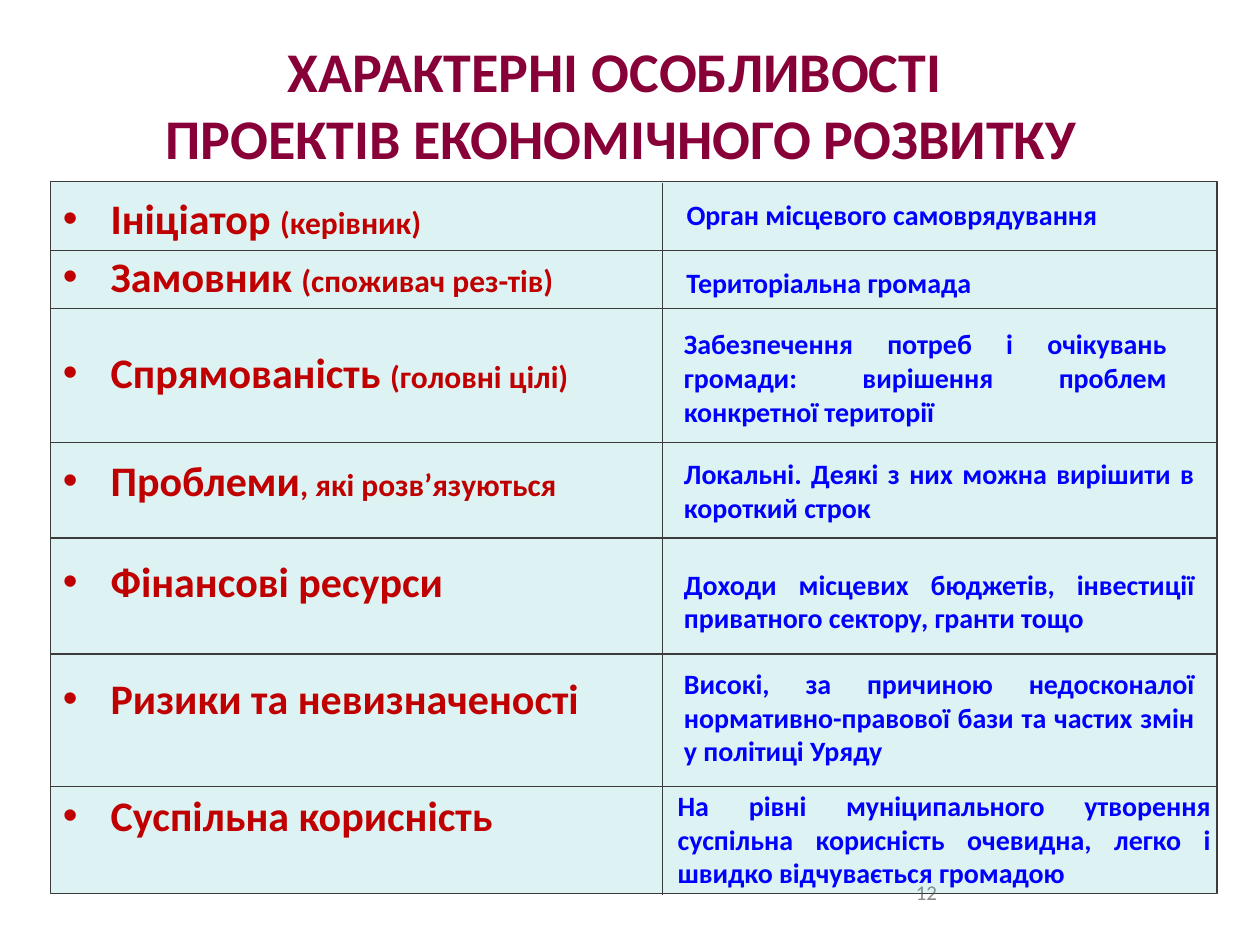
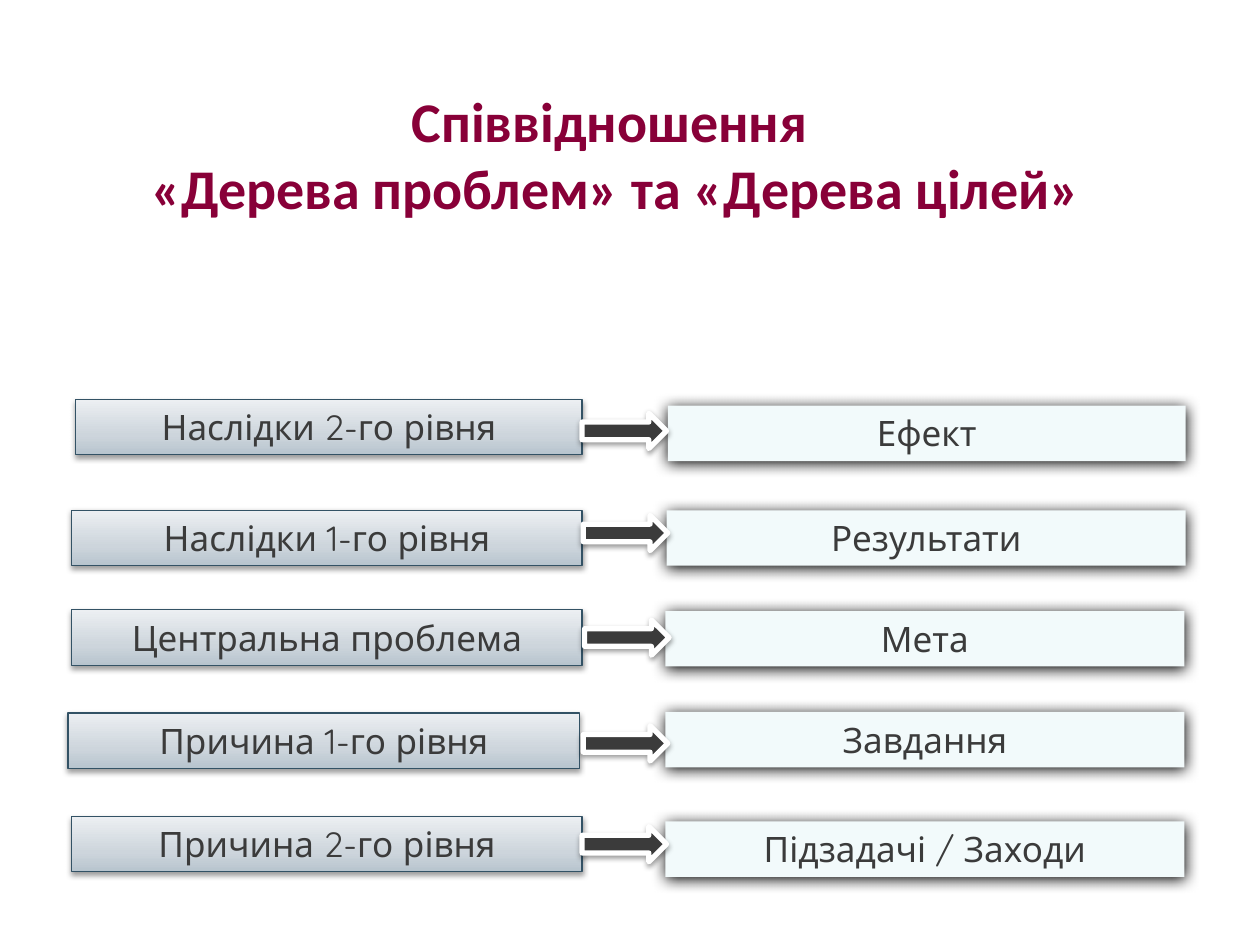
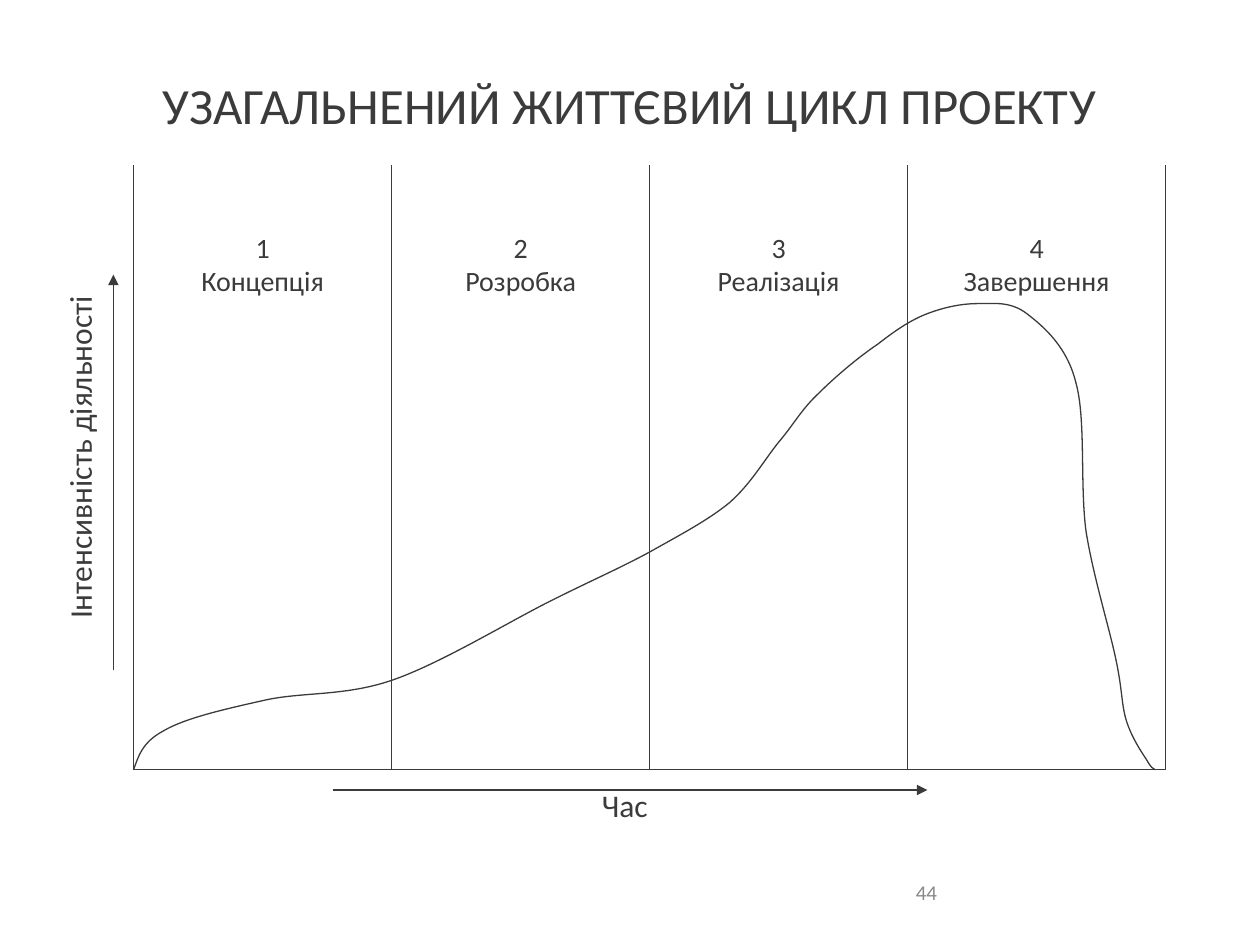
from copy import deepcopy

from lxml import etree
from pptx import Presentation
from pptx import util as u
from pptx.dml.color import RGBColor
from pptx.enum import shapes, text
from pptx.oxml.ns import qn

FONT = "Calibri"
BOX_FONT = "Quicksand"
DARK = "3B3B3B"
TITLE_COLOR = "880038"
LABEL_COLOR = "C00000"
VALUE_COLOR = "0000FF"
NUMBER_COLOR = "898989"
LEFT, CENTER, JUSTIFY = text.PP_ALIGN.LEFT, text.PP_ALIGN.CENTER, text.PP_ALIGN.JUSTIFY
TOP, MIDDLE = text.MSO_ANCHOR.TOP, text.MSO_ANCHOR.MIDDLE
color = RGBColor.from_string


def write(frame, content, size, hex_color, bold=False, align=CENTER, anchor=TOP, font=FONT):
    frame.text = content
    frame.word_wrap = True
    frame.vertical_anchor = anchor
    for paragraph in frame.paragraphs:
        paragraph.alignment = align
        for run in paragraph.runs:
            run.font.name = font
            run.font.size = u.Pt(size)
            run.font.bold = bold
            run.font.color.rgb = color(hex_color)


def draw_line(slide, start_x, start_y, end_x, end_y, arrow=False):
    ends = [u.Inches(value) for value in (start_x, start_y, end_x, end_y)]
    connector = slide.shapes.add_connector(shapes.MSO_CONNECTOR.STRAIGHT, *ends)
    connector.line.color.rgb = color(DARK)
    connector.line.width = u.Pt(0.75)
    if arrow:
        etree.SubElement(connector.line._get_or_add_ln(), qn("a:tailEnd"), type="triangle")
    etree.SubElement(connector._element.spPr, qn("a:effectLst"))


presentation = Presentation()
presentation.slide_width = u.Inches(10)
presentation.slide_height = u.Inches(7.5)

# Slides with their titles and page numbers
headings = [
    ("ХАРАКТЕРНІ ОСОБЛИВОСТІ \vПРОЕКТІВ ЕКОНОМІЧНОГО РОЗВИТКУ",
     (0.43, 0.36, 9, 0.93), 32, TITLE_COLOR, True, "12"),
    ("Співвідношення \v«Дерева проблем» та «Дерева цілей»",
     (0.12, 0.76, 9.54, 0.92), 32, TITLE_COLOR, True, None),
    ("УЗАГАЛЬНЕНИЙ ЖИТТЄВИЙ ЦИКЛ ПРОЕКТУ",
     (0.5, 0.5, 9, 0.65), 29, DARK, False, "44"),
]
slides = []
for title, box, size, title_color, bold, number in headings:
    slide = presentation.slides.add_slide(presentation.slide_layouts[6])
    if number:
        number_box = slide.shapes.add_textbox(*map(u.Inches, (7.17, 6.83, 2.33, 0.5)))
        write(number_box.text_frame, number, 12, NUMBER_COLOR, align=LEFT, anchor=MIDDLE)
    title_box = slide.shapes.add_textbox(*map(u.Inches, box))
    write(title_box.text_frame, title, size, title_color, bold, anchor=MIDDLE)
    slides.append(slide)
features_slide, trees_slide, cycle_slide = slides

# Features: tinted panel with its dividers
panel = features_slide.shapes.add_shape(
    shapes.MSO_SHAPE.RECTANGLE, *map(u.Inches, (0.4, 1.44, 9.26, 5.65)))
panel.shadow.inherit = False
panel.fill.solid()
panel.fill.fore_color.rgb = color("46BCC2")
panel_color = panel._element.spPr.find(qn("a:solidFill"))[0]
etree.SubElement(panel_color, qn("a:alpha"), val="19000")
panel.line.color.rgb = color(DARK)
panel.line.width = u.Pt(0.75)
draw_line(features_slide, 5.26, 1.45, 5.26, 7.1)
for divider_y in (1.99, 2.45, 3.51, 4.27, 5.19, 6.24):
    draw_line(features_slide, 0.4, divider_y, 9.66, divider_y)

# Features: bulleted labels with notes and the space before each
labels = [
    ("Ініціатор ", "(керівник)", 0),
    ("Замовник ", "(споживач рез-тів)", 4.4),
    ("Спрямованість ", "(головні цілі)", 26),
    ("Проблеми", ", які розв’язуються", 33),
    ("Фінансові ресурси", "", 29),
    ("Ризики та невизначеності", "", 38),
    ("Суспільна корисність", "", 38),
]
label_box = features_slide.shapes.add_textbox(*map(u.Inches, (0.4, 1.48, 4.94, 5.55)))
write(label_box.text_frame, "\n".join(label for label, note, space in labels),
      24, LABEL_COLOR, True, LEFT)
for paragraph, (label, note, space) in zip(label_box.text_frame.paragraphs, labels):
    paragraph.space_before = u.Pt(space)
    if note:
        note_run = paragraph.add_run()
        note_run.text = note
        note_run.font.name = FONT
        note_run.font.size = u.Pt(18)
        note_run.font.bold = True
        note_run.font.color.rgb = color(LABEL_COLOR)
    properties = paragraph._p.get_or_add_pPr()
    properties.set("marL", str(u.Inches(0.38)))
    properties.set("indent", str(-u.Inches(0.38)))
    etree.SubElement(properties, qn("a:buFont"), typeface="Arial")
    etree.SubElement(properties, qn("a:buChar"), char="•")

# Features: values
values = [
    ("Орган місцевого самоврядування", (5.35, 1.52, 4.25, 0.48), LEFT, TOP),
    ("Територіальна громада", (5.35, 2.06, 4.43, 0.48), LEFT, TOP),
    ("Забезпечення потреб і очікувань громади: вирішення проблем конкретної території",
     (5.33, 2.52, 4.03, 0.95), JUSTIFY, MIDDLE),
    ("Локальні. Деякі з них можна вирішити в короткий строк",
     (5.33, 3.56, 4.25, 0.66), JUSTIFY, MIDDLE),
    ("Доходи місцевих бюджетів, інвестиції приватного сектору, гранти тощо",
     (5.33, 4.44, 4.25, 0.66), JUSTIFY, MIDDLE),
    ("Високі, за причиною недосконалої нормативно-правової бази та частих змін "
     "у політиці Уряду", (5.33, 5.36, 4.25, 0.66), JUSTIFY, MIDDLE),
    ("На рівні муніципального утворення суспільна корисність очевидна, легко і швидко "
     "відчувається громадою", (5.28, 6.33, 4.43, 0.66), JUSTIFY, MIDDLE),
]
for value, box, align, anchor in values:
    value_box = features_slide.shapes.add_textbox(*map(u.Inches, box))
    write(value_box.text_frame, value, 16, VALUE_COLOR, True, align, anchor)

# Problem tree matched with goal tree: text, left, top, width of each box; left, top of arrow
pairs = [
    (("Наслідки 2-го рівня", 0.6, 3.17, 4.02), ("Ефект", 5.3, 3.22, 4.11), (4.62, 3.28)),
    (("Наслідки 1-го рівня", 0.57, 4.05, 4.05), ("Результати", 5.29, 4.05, 4.12), (4.63, 4.09)),
    (("Центральна проблема", 0.57, 4.84, 4.05), ("Мета", 5.28, 4.85, 4.12), (4.64, 4.92)),
    (("Причина 1-го рівня", 0.54, 5.66, 4.06), ("Завдання", 5.28, 5.65, 4.12), (4.63, 5.76)),
    (("Причина 2-го рівня", 0.57, 6.48, 4.05), ("Підзадачі / Заходи", 5.28, 6.52, 4.12),
     (4.62, 6.56)),
]
gradient = [(0, "B7C4CE"), (0.35, "CDD5DC"), (1, "ECEFF2")]
for problem, goal, arrow_place in pairs:
    parts = [("problem", *problem, 0.44), ("goal", *goal, 0.44),
             ("arrow", "", *arrow_place, 0.67, 0.28)]
    for kind, caption, left, top, width, height in parts:
        preset = shapes.MSO_SHAPE.RIGHT_ARROW if kind == "arrow" else shapes.MSO_SHAPE.RECTANGLE
        shape = trees_slide.shapes.add_shape(
            preset, *map(u.Inches, (left, top, width, height)))
        if kind == "problem":
            shape.fill.gradient()
            shape.fill.gradient_angle = 90
            stop_list = shape._element.spPr.find(".//" + qn("a:gsLst"))
            stop_list.insert(1, deepcopy(stop_list[0]))
            for stop, (position, stop_color) in zip(shape.fill.gradient_stops, gradient):
                stop.position = position
                stop.color.rgb = color(stop_color)
            shape.line.color.rgb = color("335265")
            shape.line.width = u.Pt(0.75)
        elif kind == "goal":
            shape.fill.solid()
            shape.fill.fore_color.rgb = color("F2FAFB")
            shape.line.fill.background()
        else:
            shape.fill.solid()
            shape.fill.fore_color.rgb = color(DARK)
            shape.line.color.rgb = color("FFFFFF")
            shape.line.width = u.Pt(3)
        if caption:
            write(shape.text_frame, caption, 20, DARK, font=BOX_FONT)

        # Soft shadow below, stronger under the goals
        blur, distance, opacity = (8.5, 1, 100) if kind == "goal" else (3.1, 1.6, 38)
        shape.shadow.inherit = False
        effects = shape._element.spPr.find(qn("a:effectLst"))
        shadow = etree.SubElement(effects, qn("a:outerShdw"), blurRad=str(u.Pt(blur)),
                                  dist=str(u.Pt(distance)), dir="5400000", rotWithShape="0")
        shadow_color = etree.SubElement(shadow, qn("a:srgbClr"), val="000000")
        etree.SubElement(shadow_color, qn("a:alpha"), val=str(opacity * 1000))

# Life cycle: phase borders and names
phases = ["Концепція", "Розробка", "Реалізація", "Завершення"]
chart_left, chart_right, chart_top, chart_bottom = 1.06, 9.25, 1.31, 6.11
phase_width = (chart_right - chart_left) / len(phases)
for index in range(len(phases) + 1):
    border_x = chart_left + index * phase_width
    draw_line(cycle_slide, border_x, chart_top, border_x, chart_bottom)
for index, phase in enumerate(phases):
    phase_left = chart_left + index * phase_width + 0.16
    phase_box = cycle_slide.shapes.add_textbox(*map(u.Inches, (phase_left, 1.78, 1.73, 0.64)))
    write(phase_box.text_frame, f"{index + 1}\n{phase}", 16, DARK)

# Axes with their names
draw_line(cycle_slide, chart_left, chart_bottom, chart_right, chart_bottom)
draw_line(cycle_slide, 2.64, 6.27, 7.36, 6.27, arrow=True)
draw_line(cycle_slide, 0.9, 5.32, 0.9, 2.18, arrow=True)
for axis_name, box, rotation in (("Час", (4.21, 6.19, 1.5, 0.4), 0),
                                 ("Інтенсивність діяльності", (-1.14, 3.43, 3.54, 0.4), 270)):
    axis_box = cycle_slide.shapes.add_textbox(*map(u.Inches, box))
    axis_box.rotation = rotation
    write(axis_box.text_frame, axis_name, 18, DARK)

# Activity curve: two control points and an end point for each Bezier segment
segments = [
    ((1.1, 6), (1.13, 5.89), (1.3, 5.8)),
    ((1.47, 5.7), (1.78, 5.63), (2.09, 5.56)),
    ((2.39, 5.49), (2.73, 5.53), (3.11, 5.4)),
    ((3.49, 5.27), (4.03, 4.94), (4.37, 4.77)),
    ((4.71, 4.6), (4.92, 4.51), (5.16, 4.38)),
    ((5.39, 4.25), (5.62, 4.13), (5.79, 3.99)),
    ((5.96, 3.84), (6.06, 3.66), (6.18, 3.51)),
    ((6.3, 3.37), (6.36, 3.25), (6.5, 3.12)),
    ((6.63, 2.99), (6.82, 2.83), (6.97, 2.73)),
    ((7.11, 2.62), (7.23, 2.54), (7.36, 2.49)),
    ((7.49, 2.44), (7.63, 2.41), (7.76, 2.41)),
    ((7.89, 2.41), (8.02, 2.39), (8.15, 2.49)),
    ((8.28, 2.59), (8.47, 2.75), (8.54, 3.04)),
    ((8.62, 3.33), (8.57, 3.85), (8.62, 4.22)),
    ((8.68, 4.59), (8.81, 5), (8.86, 5.25)),
    ((8.91, 5.49), (8.9, 5.59), (8.94, 5.72)),
    ((8.98, 5.85), (9.06, 5.97), (9.1, 6.03)),
    ((9.14, 6.1), (9.15, 6.1), (9.17, 6.11)),
]
builder = cycle_slide.shapes.build_freeform(u.Inches(chart_left), u.Inches(chart_bottom))
builder.add_line_segments([tuple(map(u.Inches, end)) for *controls, end in segments], close=False)
curve = builder.convert_to_shape()
curve.shadow.inherit = False
curve.fill.background()
curve.line.color.rgb = color(DARK)
curve.line.width = u.Pt(0.75)

# Bend the straight segments into Bezier ones
straight_segments = list(curve._element.iter(qn("a:lnTo")))
for straight, segment in zip(straight_segments, segments):
    bend = etree.Element(qn("a:cubicBezTo"))
    for x, y in segment:
        etree.SubElement(bend, qn("a:pt"), x=str(u.Inches(x) - curve.left),
                         y=str(u.Inches(y) - curve.top))
    straight.getparent().replace(straight, bend)

presentation.save("out.pptx")
